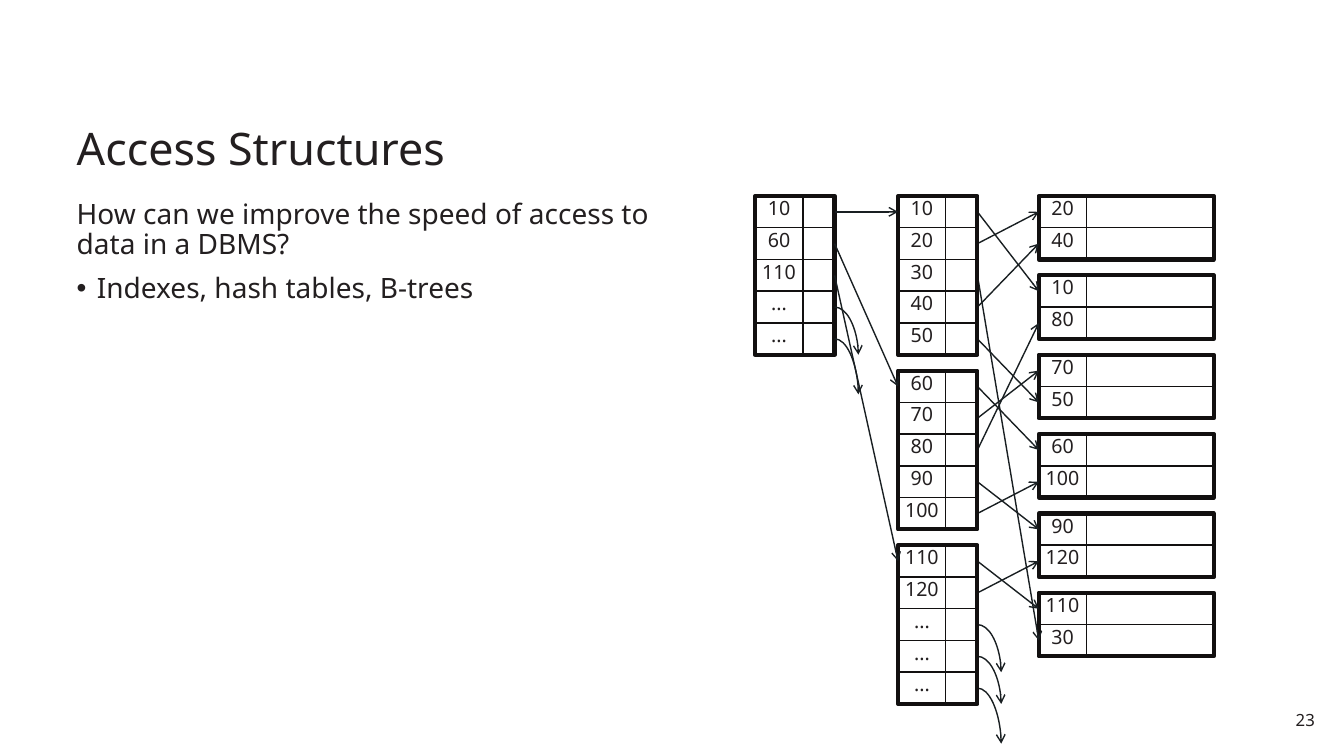
from lxml import etree
from pptx import Presentation
from pptx import util as u
from pptx.dml.color import RGBColor
from pptx.enum import shapes, text
from pptx.oxml.ns import qn

FONT, INK, EDGE, ARROW, WHITE = "Noto Sans", "231F20", "121010", "191F22", "FFFFFF"
TOP, ROW, GAP = 140, 22.68, 11.34
KEY_W, POINTER_W, RECORD_W = 34, 22.68, 91
ROOT_X, LEAF_X, DATA_X = 539.5, 641.5, 742
ROOT = [["10", "60", "110", "...", "..."]]
LEAVES = [
    ["10", "20", "30", "40", "50"],
    ["60", "70", "80", "90", "100"],
    ["110", "120", "...", "...", "..."],
]
DATA = [["20", "40"], ["10", "80"], ["70", "50"], ["60", "100"], ["90", "120"], ["110", "30"]]


def color(value):
    """Turn a hex string into a colour."""
    return RGBColor.from_string(value)


def apply(obj, **fmt):
    """Set each given attribute on an object."""
    for name, value in fmt.items():
        setattr(obj, name, value)


def box(left, top, width, height):
    """Turn a place in points into lengths."""
    return [u.Pt(v) for v in (left, top, width, height)]


def style_frame(tf, x, y, anchor, wrap=True):
    """Set the margins, anchor and wrapping of a text frame."""
    apply(tf, margin_left=u.Pt(x), margin_right=u.Pt(x), margin_top=u.Pt(y), margin_bottom=u.Pt(y),
          vertical_anchor=anchor, word_wrap=wrap, auto_size=text.MSO_AUTO_SIZE.NONE)


def write(p, words, size, align=text.PP_ALIGN.LEFT, spacing=1.0, before=0):
    """Write one formatted paragraph."""
    apply(p, alignment=align, line_spacing=spacing, space_before=u.Pt(before), space_after=u.Pt(0))
    r = p.add_run()
    r.text = words
    apply(r.font, name=FONT, size=u.Pt(size))
    r.font.color.rgb = color(INK)


def set_bullet(p, indent, char=None):
    """Give a paragraph a hanging bullet, or none."""
    pPr = p._p.get_or_add_pPr()
    pPr.set("marL", str(u.Pt(indent)))
    pPr.set("indent", str(-u.Pt(indent)))
    if char:
        etree.SubElement(pPr, qn("a:buFont")).set("typeface", "Arial")
        etree.SubElement(pPr, qn("a:buChar")).set("char", char)
    else:
        etree.SubElement(pPr, qn("a:buNone"))


def place(sp, *at):
    """Move and size a shape, in points."""
    apply(sp, **dict(zip(("left", "top", "width", "height"), box(*at))))


def add_title(s, words):
    """Fill the title placeholder."""
    sp = s.shapes.title
    place(sp, 49, 55, 862, 73)
    style_frame(sp.text_frame, 5.76, 2.88, text.MSO_ANCHOR.BOTTOM)
    write(sp.text_frame.paragraphs[0], words, 32, spacing=0.9)


def add_body(s, question, answer):
    """Fill the body placeholder with a question and a bulleted answer."""
    sp = s.placeholders[1]
    place(sp, 49, TOP, 425.5, 351)
    tf = sp.text_frame
    style_frame(tf, 5.76, 2.88, text.MSO_ANCHOR.TOP)
    p = tf.paragraphs[0]
    set_bullet(p, 0)
    write(p, question, 20, spacing=0.9)
    p = tf.add_paragraph()
    set_bullet(p, 14.4, "•")
    write(p, answer, 20, spacing=0.9, before=10)


def add_number(s, number):
    """Add the page number."""
    tf = s.shapes.add_textbox(*box(911, 502.5, 34, 22.5)).text_frame
    style_frame(tf, 5.76, 4.32, text.MSO_ANCHOR.TOP)
    write(tf.paragraphs[0], number, 12, text.PP_ALIGN.RIGHT)


def add_rect(s, *at, weight=1, fill=WHITE, words=None):
    """Add an outlined rectangle with an optional centred label."""
    sp = s.shapes.add_shape(shapes.MSO_SHAPE.RECTANGLE, *box(*at))
    sp.shadow.inherit = False
    if fill:
        sp.fill.solid()
        sp.fill.fore_color.rgb = color(fill)
    else:
        sp.fill.background()
    sp.line.color.rgb = color(EDGE)
    sp.line.width = u.Pt(weight)
    if words:
        style_frame(sp.text_frame, 0, 0, text.MSO_ANCHOR.TOP, wrap=False)
        write(sp.text_frame.paragraphs[0], words, 14, text.PP_ALIGN.CENTER)
    return sp


def block_tops(blocks):
    """Give each block with the top of its place in the stack."""
    top = TOP
    for keys in blocks:
        yield keys, top
        top += len(keys) * ROW + GAP


def add_cells(s, left, blocks, width):
    """Add the rows of stacked blocks and return key, key cell and side cell of each."""
    rows = []
    for keys, top in block_tops(blocks):
        for i, key in enumerate(keys):
            y = top + i * ROW
            rows.append((key, add_rect(s, left, y, KEY_W, ROW, words=key),
                         add_rect(s, left + KEY_W, y, width, ROW)))
    return rows


def add_frames(s, left, blocks, width):
    """Outline each stacked block."""
    for keys, top in block_tops(blocks):
        add_rect(s, left, top, KEY_W + width, len(keys) * ROW, weight=3, fill=None)


def style_arrow(cxn):
    """Give a connector its line and open arrowhead."""
    cxn.line.color.rgb = color(ARROW)
    cxn.line.width = u.Pt(1)
    etree.SubElement(cxn.line._get_or_add_ln(), qn("a:tailEnd")).set("type", "arrow")
    etree.SubElement(cxn._element.spPr, qn("a:effectLst"))


def add_arrow(s, source, target):
    """Join a pointer cell to a key cell."""
    cxn = s.shapes.add_connector(shapes.MSO_CONNECTOR.STRAIGHT, 0, 0, 0, 0)
    cxn.begin_connect(source, 3)
    cxn.end_connect(target, 1)
    style_arrow(cxn)


def add_curve(s, source, drop):
    """Add a curved arrow falling from a pointer cell."""
    x, y = source.left + source.width, source.top + source.height // 2
    cxn = s.shapes.add_connector(shapes.MSO_CONNECTOR.CURVE, x, y, x + u.Pt(17), y + u.Pt(drop))
    cxn._element.spPr.find(qn("a:prstGeom")).set("prst", "curvedConnector2")
    style_arrow(cxn)


def add_links(s, rows, targets):
    """Draw the arrow of every pointer, curved where its key is elided."""
    cells = {key: cell for key, cell, side in targets}
    for i, (key, cell, pointer) in enumerate(rows):
        if key == "...":
            add_curve(s, pointer, ROW * (1.75 if i == len(rows) - 1 else 1.5))
        else:
            add_arrow(s, pointer, cells[key])


def main():
    """Build the slide."""
    prs = Presentation()
    apply(prs, slide_width=u.Pt(960), slide_height=u.Pt(540))
    s = prs.slides.add_slide(prs.slide_layouts[1])
    add_number(s, "23")
    add_title(s, "Access Structures")
    add_body(s, "How can we improve the speed of access to data in a DBMS?",
             "Indexes, hash tables, B-trees")
    records = add_cells(s, DATA_X, DATA, RECORD_W)
    add_frames(s, DATA_X, DATA, RECORD_W)
    leaves = add_cells(s, LEAF_X, LEAVES, POINTER_W)
    add_links(s, leaves, records)
    add_frames(s, LEAF_X, LEAVES, POINTER_W)
    root = add_cells(s, ROOT_X, ROOT, POINTER_W)
    add_frames(s, ROOT_X, ROOT, POINTER_W)
    add_links(s, root, leaves)
    prs.save("out.pptx")


if __name__ == "__main__":
    main()
